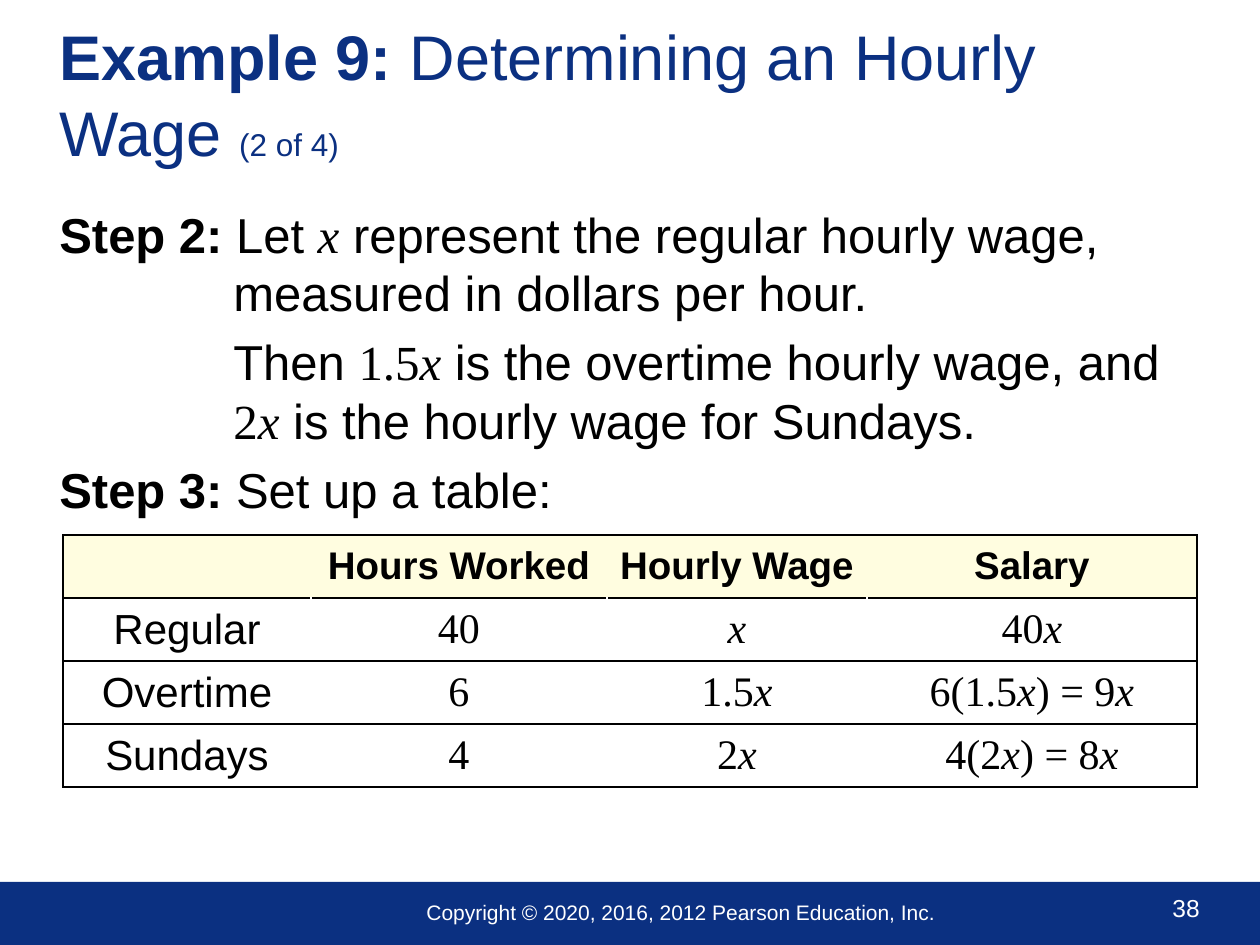
from itertools import groupby

from lxml import etree
from pptx import Presentation
from pptx import util as u
from pptx.dml.color import RGBColor
from pptx.enum import shapes, text
from pptx.oxml import ns

NAVY = RGBColor(0x0B, 0x30, 0x81)
CREAM = RGBColor(0xFF, 0xFD, 0xE0)
BLACK = RGBColor(0, 0, 0)
WHITE = RGBColor(0xFF, 0xFF, 0xFF)
PX_PER_INCH = 126
BOLD = {"bold": True}
HEADERS = ["", "Hours Worked", "Hourly Wage", "Salary"]
WAGES = [
    ["Regular", "40", "x", "40x"],
    ["Overtime", "6", "1.5x", "6(1.5x) = 9x"],
    ["Sundays", "4", "2x", "4(2x) = 8x"],
]


def px(length):
    """Turn a length in pixels into EMU."""
    return u.Emu(round(length * u.Inches(1) / PX_PER_INCH))


def math_runs(formula):
    """Split a formula into upright serif runs and italic variables."""
    return [
        ("".join(letters), {"name": "Times New Roman", "italic": variable})
        for variable, letters in groupby(formula, lambda letter: letter == "x")
    ]


def write(para, runs, size, color=BLACK, align=None, before=0):
    """Fill a paragraph with (text, format) runs."""
    para.alignment = align
    para.space_before = u.Pt(before)
    for words, style in runs:
        span = para.add_run()
        span.text = words
        font = span.font
        font.name = style.get("name", "Arial")
        font.size = u.Pt(style.get("size", size))
        font.bold = style.get("bold", False)
        font.italic = style.get("italic", False)
        font.color.rgb = color


def add_frame(page, left, top, width, height, anchor=text.MSO_ANCHOR.TOP):
    """Add a wrapping text box and return its text frame."""
    box = page.shapes.add_textbox(px(left), px(top), px(width), px(height))
    frame = box.text_frame
    frame.word_wrap = True
    frame.vertical_anchor = anchor
    return frame


def add_title(page, left, top, width, height):
    """Write the slide title."""
    frame = add_frame(page, left, top, width, height, text.MSO_ANCHOR.MIDDLE)
    runs = [
        ("Example 9: ", BOLD),
        ("Determining an Hourly Wage ", {}),
        ("(2 of 4)", {"size": 18}),
    ]
    write(frame.paragraphs[0], runs, 36, NAVY)


def add_steps(page, left, top, width, height):
    """Write the steps with a hanging indent."""
    frame = add_frame(page, left, top, width, height)
    hang = px(174)
    steps = [
        (-hang, [("Step 2: ", BOLD), ("Let ", {}), *math_runs("x"),
                 (" represent the regular hourly wage, measured in dollars per hour.", {})]),
        (0, [("Then ", {}), *math_runs("1.5x"),
             (" is the overtime hourly wage, and ", {}), *math_runs("2x"),
             (" is the hourly wage for Sundays.", {})]),
        (-hang, [("Step 3:", BOLD), (" Set up a table:", {})]),
    ]
    for index, (indent, runs) in enumerate(steps):
        para = frame.paragraphs[0] if index == 0 else frame.add_paragraph()
        write(para, runs, 28, before=5.6 if index else 0)
        properties = para._p.get_or_add_pPr()
        properties.set("marL", str(hang))
        properties.set("indent", str(indent))


def set_border(cell, side, color):
    """Draw one cell side in a colour, or hide it when there is none."""
    line = etree.SubElement(cell._tc.get_or_add_tcPr(), ns.qn(f"a:ln{side}"), w=str(u.Pt(1)))
    if color is None:
        etree.SubElement(line, ns.qn("a:noFill"))
    else:
        fill = etree.SubElement(line, ns.qn("a:solidFill"))
        etree.SubElement(fill, ns.qn("a:srgbClr"), val=str(color))


def add_wage_table(page, left, top, widths, row_height):
    """Add the table of hours, wages and salaries."""
    rows = [HEADERS, *WAGES]
    last = len(widths) - 1
    table = page.shapes.add_table(
        len(rows), len(widths), px(left), px(top), px(sum(widths)), px(row_height * len(rows))
    ).table
    for column, width in zip(table.columns, widths):
        column.width = px(width)
    for r, values in enumerate(rows):
        table.rows[r].height = px(row_height)
        inner = WHITE if r else None
        for c, value in enumerate(values):
            cell = table.cell(r, c)
            cell.vertical_anchor = text.MSO_ANCHOR.MIDDLE
            set_border(cell, "L", BLACK if c == 0 else inner)
            set_border(cell, "R", BLACK if c == last else inner)
            set_border(cell, "T", BLACK)
            set_border(cell, "B", BLACK)
            if r == 0:
                cell.fill.solid()
                cell.fill.fore_color.rgb = CREAM
            else:
                cell.fill.background()
            if value:
                runs = math_runs(value) if r and c else [(value, {"bold": r == 0})]
                write(cell.text_frame.paragraphs[0], runs, 24 if r else 22,
                      align=text.PP_ALIGN.CENTER)


def add_footer(page, left, top, width, height):
    """Add the footer band with copyright line and page number."""
    band = page.shapes.add_shape(
        shapes.MSO_SHAPE.RECTANGLE, px(left), px(top), px(width), px(height)
    )
    band.shadow.inherit = False
    band.fill.solid()
    band.fill.fore_color.rgb = NAVY
    band.line.fill.background()
    number = add_frame(page, left + 1160, top + 5, 93, 43)
    write(number.paragraphs[0], [("38", {})], 14, WHITE)
    notice = add_frame(page, left + 414, top + 11, 547, 38)
    write(notice.paragraphs[0],
          [("Copyright © 2020, 2016, 2012 Pearson Education, Inc.", {})], 12, WHITE)


def main():
    """Build the slide and save the deck."""
    deck = Presentation()
    deck.slide_width = px(1260)
    deck.slide_height = px(945)
    page = deck.slides.add_slide(deck.slide_layouts[6])
    add_footer(page, 0, 882, 1260, 63)
    add_title(page, 47, 21, 1150, 144)
    add_steps(page, 47, 198, 1150, 658)
    add_wage_table(page, 63, 535, [248, 296, 260, 330], 63)
    deck.save("out.pptx")


if __name__ == "__main__":
    main()
